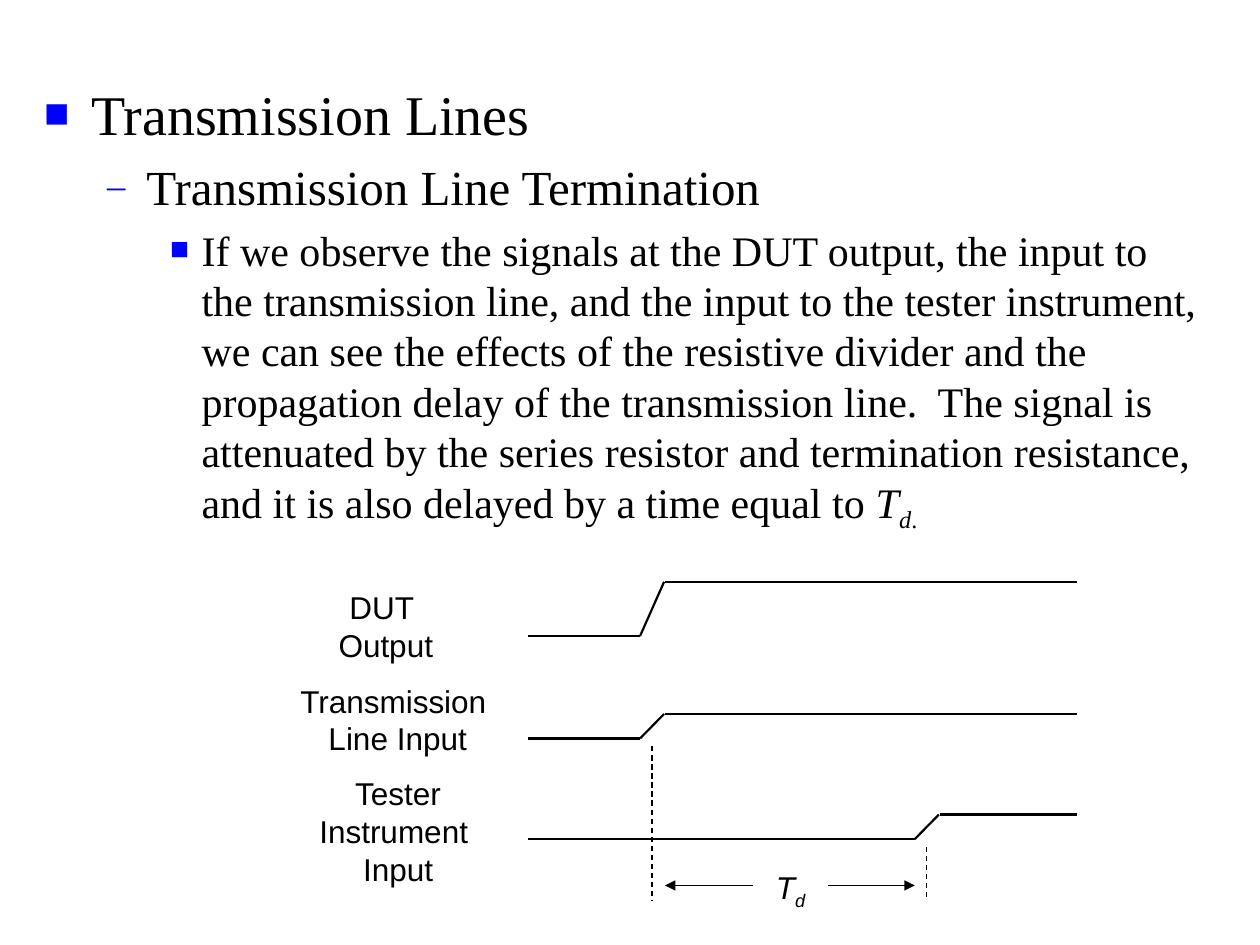
from lxml import etree
from pptx import Presentation
from pptx.dml.color import RGBColor
from pptx.enum.dml import MSO_LINE
from pptx.enum.shapes import MSO_CONNECTOR
from pptx.enum.text import MSO_ANCHOR, MSO_AUTO_SIZE, PP_ALIGN
from pptx.oxml.ns import qn
from pptx.util import Pt

INK, BLUE = "000000", "0000FF"
SERIF, SANS = "Times New Roman", "Arial"

# Text, size, left margin, hanging indent, bullet
POINTS = [
    ("Transmission Lines", 32, 27, 27, "■"),
    ("Transmission Line Termination", 28, 58.5, 22.5, "–"),
    ("If we observe the signals at the DUT output, the input to the "
     "transmission line, and the input to the tester instrument, we can see "
     "the effects of the resistive divider and the propagation delay of the "
     "transmission line.  The signal is attenuated by the series resistor and "
     "termination resistance, and it is also delayed by a time equal to ",
     24, 90, 18, "■"),
]
# Label, its left, top, width, height; then low level, high level, rise start
SIGNALS = [
    ("DUT \nOutput", (7.5, 0, 150, 45), 31, 0, 227.75),
    ("Transmission \nLine Input", (0, 53.5, 178.5, 49), 89.5, 75.5, 227.75),
    ("Tester\nInstrument \nInput", (7.5, 106.5, 164, 62), 147, 133, 384.75),
]
START, END, RAMP = 163.5, 477.5, 13.75


def color(code):
    return RGBColor.from_string(code)


def style(run, size, face, slant=None, sub=False):
    font = run.font
    font.size, font.name, font.italic = Pt(size), face, slant
    font.color.rgb = color(INK)
    if sub:
        font._element.set("baseline", "-25000")


def add_run(para, text, *look):
    run = para.add_run()
    run.text = text
    style(run, *look)


def bullet(para, left, hang, mark):
    props = para._p.get_or_add_pPr()
    props.set("marL", str(Pt(left)))
    props.set("indent", str(-Pt(hang)))
    tint = etree.SubElement(props, qn("a:buClr"))
    etree.SubElement(tint, qn("a:srgbClr")).set("val", BLUE)
    etree.SubElement(props, qn("a:buSzPct")).set("val", "75000")
    etree.SubElement(props, qn("a:buFont")).set("typeface", SERIF)
    etree.SubElement(props, qn("a:buChar")).set("char", mark)


def outline(body, x, y, wide, high):
    body.left, body.top, body.width, body.height = map(Pt, (x, y, wide, high))
    frame = body.text_frame
    frame.auto_size = MSO_AUTO_SIZE.NONE
    frame.vertical_anchor = MSO_ANCHOR.TOP
    frame.text = "\n".join(point[0] for point in POINTS)
    for level, (para, point) in enumerate(zip(frame.paragraphs, POINTS)):
        _, size, left, hang, mark = point
        para.level = level
        para.space_before = Pt(size * 0.2)
        bullet(para, left, hang, mark)
        style(para.runs[0], size, SERIF)
    # Delay symbol closes the last point
    add_run(para, "T", size, SERIF, True)
    add_run(para, "d", size, SERIF, True, True)
    add_run(para, ".", size, SERIF, False, True)


def timing(slide, x, y):
    shapes = slide.shapes.add_group_shape().shapes

    def label(text, left, top, wide, high, slant=None):
        box = shapes.add_textbox(Pt(x + left), Pt(y + top), Pt(wide), Pt(high))
        frame = box.text_frame
        frame.word_wrap = True
        frame.text = text
        for para in frame.paragraphs:
            para.alignment = PP_ALIGN.CENTER
            style(para.runs[0], 18, SANS, slant)
        return para

    def line(x1, y1, x2, y2, width=1.25, dash=False, arrow=False):
        link = shapes.add_connector(MSO_CONNECTOR.STRAIGHT, Pt(x + x1),
                                    Pt(y + y1), Pt(x + x2), Pt(y + y2))
        link.line.color.rgb = color(INK)
        link.line.width = Pt(width)
        if dash:
            link.line.dash_style = MSO_LINE.DASH
        if arrow:
            tip = etree.SubElement(link.line._get_or_add_ln(), qn("a:tailEnd"))
            tip.set("type", "triangle")
        etree.SubElement(link._element.spPr, qn("a:effectLst"))

    # Signal labels and traces
    for text, place, low, high, rise in SIGNALS:
        label(text, *place)
        line(START, low, rise, low)
        line(rise, low, rise + RAMP, high)
        line(rise + RAMP + 0.5, high, END, high)

    # Dashed markers at mid-rise
    for _, _, low, _, rise in SIGNALS[1:]:
        mid = rise + RAMP / 2
        line(mid, low + 4.5, mid, 182.25, 0.75, dash=True)

    # Delay arrows and symbol
    for tail, head in ((292.5, 242), (335, 384.75)):
        line(tail, 173.5, head, 173.5, 0.75, arrow=True)
    para = label("T", 278, 160, 71.5, 29.5, True)
    add_run(para, "d", 18, SANS, True, True)


def main():
    deck = Presentation()
    deck.slide_width, deck.slide_height = Pt(720), Pt(540)
    slide = deck.slides.add_slide(deck.slide_layouts[1])
    title = slide.shapes.title._element
    title.getparent().remove(title)
    outline(slide.placeholders[1], 18, 42, 678, 324)
    timing(slide, 138, 332.5)
    deck.save("out.pptx")


if __name__ == "__main__":
    main()
